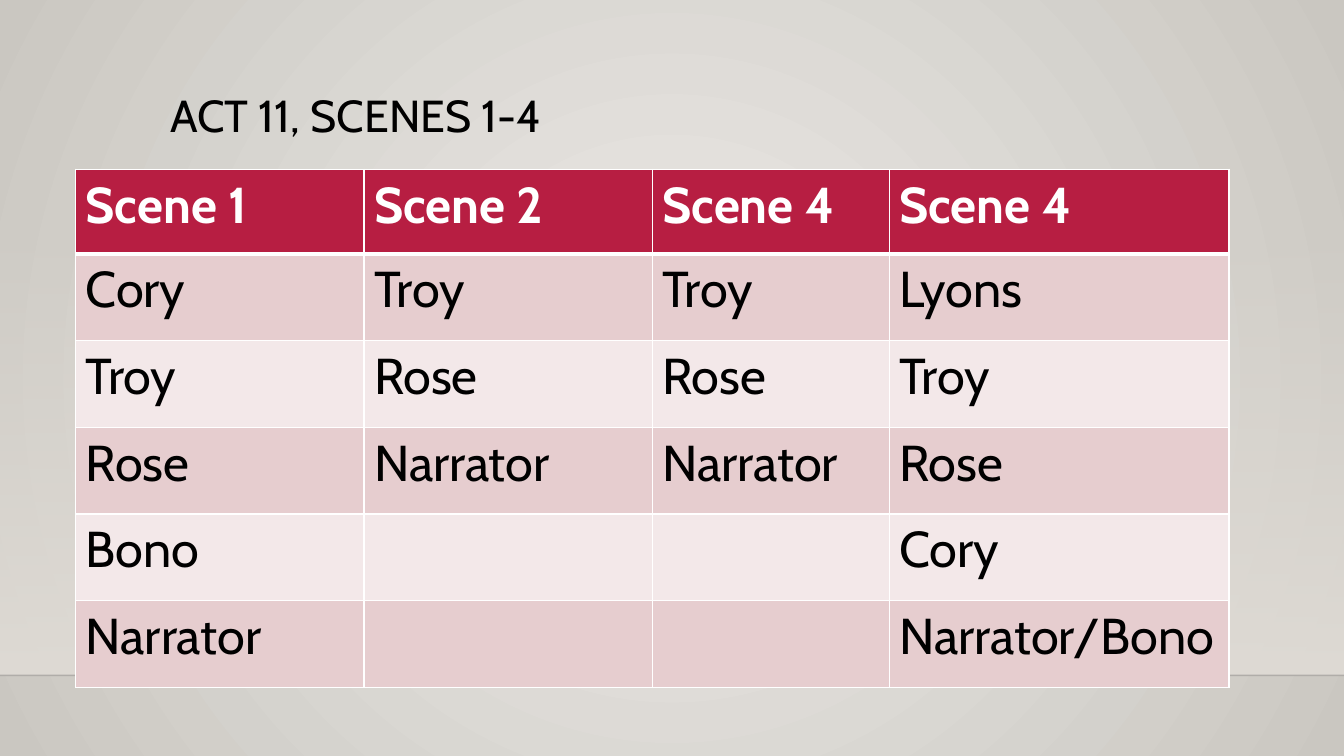
from itertools import zip_longest

from lxml import etree
from pptx import Presentation
from pptx import util as u
from pptx.dml.color import RGBColor
from pptx.enum import shapes, text
from pptx.oxml.ns import qn

FONT = "Cabin"
RED, WHITE, BLACK, SAND = "B71E42", "FFFFFF", "000000", "DFDBD5"
BANDS = ("E6CDCF", "F3E8E9")
SCENES = [
    ("Scene 1", ["Cory", "Troy", "Rose", "Bono", "Narrator"]),
    ("Scene 2", ["Troy", "Rose", "Narrator"]),
    ("Scene 4", ["Troy", "Rose", "Narrator"]),
    ("Scene 4", ["Lyons", "Troy", "Rose", "Cory", "Narrator/Bono"]),
]
COLUMN_WIDTHS = (2.86, 2.86, 2.35, 3.37)
HEADER_HEIGHT, ROW_HEIGHT = 0.84, 0.86


def rgb(color):
    return RGBColor.from_string(color)


def sub(parent, tag, **attrs):
    return etree.SubElement(parent, qn(tag), attrs)


def set_alpha(color_element, percent):
    sub(color_element, "a:alpha", val=str(percent * 1000))


def set_font(p, size, color, bold=False):
    p.font.name, p.font.size, p.font.bold = FONT, u.Pt(size), bold
    p.font.color.rgb = rgb(color)


def set_gradient(fill, start, end):
    fill.gradient()
    for stop, color in zip(fill.gradient_stops, (start, end)):
        stop.color.rgb = rgb(color)


def add_background(s):
    fill = s.background.fill
    set_gradient(fill, "ECEAE7", "CAC7C1")
    # Turn the linear gradient into a circular one
    lin = s.background._cSld.find(".//" + qn("a:lin"))
    grad = lin.getparent()
    circle = etree.Element(qn("a:path"), {"path": "circle"})
    sub(circle, "a:fillToRect", l="50000", t="50000", r="50000", b="50000")
    grad.replace(lin, circle)


def add_wall(s):
    sp = s.shapes.add_shape(shapes.MSO_SHAPE.RECTANGLE, 0, u.Inches(2.21),
                            u.Inches(13.33), u.Inches(4.49))
    sp.shadow.inherit = False
    sp.line.fill.background()
    set_gradient(sp.fill, SAND, SAND)
    sp.fill.gradient_angle = 270
    set_alpha(sp._element.spPr.find(".//" + qn("a:srgbClr")), 0)


def add_floor_line(s):
    y = u.Inches(6.7)
    line = s.shapes.add_connector(shapes.MSO_CONNECTOR.STRAIGHT, 0, y, u.Inches(13.33), y)
    line.line.width = u.Pt(1)
    line.line.color.rgb = rgb("000001")
    sp_pr = line._element.spPr
    set_alpha(sp_pr.find(".//" + qn("a:srgbClr")), 20)
    sub(sp_pr, "a:effectLst")


def add_title(s, title):
    box = s.shapes.add_textbox(u.Inches(1.59), u.Inches(0.88), u.Inches(10.5), u.Inches(1.15))
    tf = box.text_frame
    tf.word_wrap = True
    tf.vertical_anchor = text.MSO_ANCHOR.TOP
    p = tf.paragraphs[0]
    p.text = title
    p.line_spacing = 0.9
    set_font(p, 32, BLACK)


def set_borders(cell, widths):
    tc_pr = cell._tc.get_or_add_tcPr()
    for side, width in zip("LRTB", widths):
        ln = sub(tc_pr, "a:ln" + side, w=str(u.Pt(width)))
        sub(sub(ln, "a:solidFill"), "a:srgbClr", val=WHITE)


def fill_cell(cell, value, fill, color, bold, top, bottom):
    set_borders(cell, (1, 1, top, bottom))
    cell.fill.solid()
    cell.fill.fore_color.rgb = rgb(fill)
    p = cell.text_frame.paragraphs[0]
    p.text = value
    set_font(p, 36, color, bold)


def add_cast_table(s):
    headers = [name for name, _ in SCENES]
    rows = list(zip_longest(*(cast for _, cast in SCENES), fillvalue=""))
    height = HEADER_HEIGHT + ROW_HEIGHT * len(rows)
    table = s.shapes.add_table(len(rows) + 1, len(headers), u.Inches(0.75), u.Inches(1.68),
                               u.Inches(sum(COLUMN_WIDTHS)), u.Inches(height)).table
    for column, width in zip(table.columns, COLUMN_WIDTHS):
        column.width = u.Inches(width)
    for i, values in enumerate([headers, *rows]):
        header = i == 0
        table.rows[i].height = u.Inches(HEADER_HEIGHT if header else ROW_HEIGHT)
        for j, value in enumerate(values):
            fill_cell(table.cell(i, j), value,
                      fill=RED if header else BANDS[(i - 1) % 2],
                      color=WHITE if header else BLACK, bold=header,
                      top=3 if i == 1 else 1, bottom=3 if header else 1)


def main():
    prs = Presentation()
    prs.slide_width, prs.slide_height = u.Inches(13.33), u.Inches(7.5)
    s = prs.slides.add_slide(prs.slide_layouts[6])
    # Backdrop
    add_background(s)
    add_wall(s)
    add_floor_line(s)
    # Content
    add_title(s, "ACT 11, SCENES 1-4")
    add_cast_table(s)
    prs.save("out.pptx")


if __name__ == "__main__":
    main()
